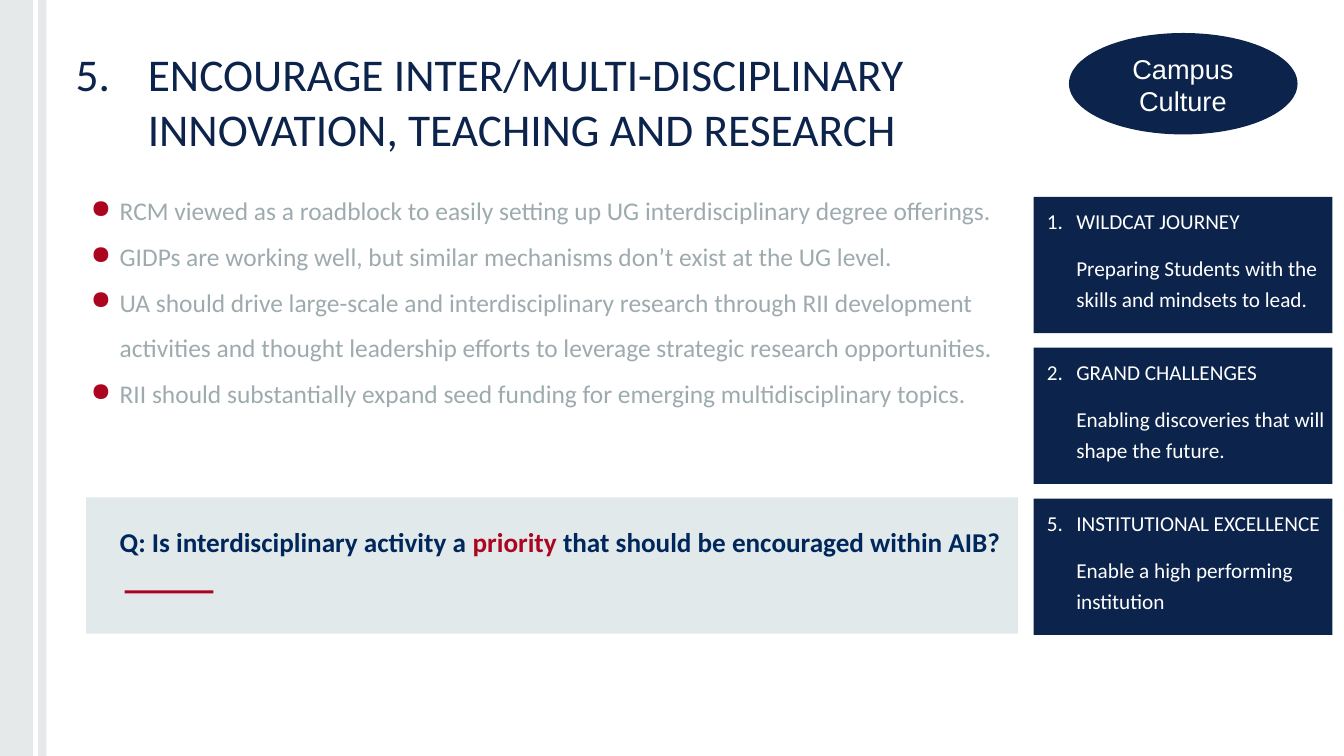
from dataclasses import dataclass

from lxml.etree import SubElement
from pptx import Presentation
from pptx.dml.color import RGBColor
from pptx.enum.shapes import MSO_SHAPE as SHAPE
from pptx.enum.text import MSO_ANCHOR as ANCHOR, PP_ALIGN as ALIGN
from pptx.oxml.ns import qn
from pptx.util import Inches, Pt


@dataclass(frozen=True)
class Theme:
    """Colours, fonts and type sizes of the slide."""
    navy: str = "0C234B"
    ink: str = "00275B"
    red: str = "AB0520"
    grey: str = "9EABAE"
    pale: str = "E2E9EB"
    white: str = "FFFFFF"
    font: str = "Calibri"
    badge_font: str = "Arial"
    title: float = 53.5
    body: float = 30
    question: float = 32
    card: float = 25


T = Theme()
POINTS = [
    "RCM viewed as a roadblock to easily setting up UG interdisciplinary degree offerings.",
    "GIDPs are working well, but similar mechanisms don’t exist at the UG level.",
    "UA should drive large-scale and interdisciplinary research through RII development "
    "activities and thought leadership efforts to leverage strategic research opportunities.",
    "RII should substantially expand seed funding for emerging multidisciplinary topics.",
]
CARDS = [
    ("1.\tWILDCAT JOURNEY", "Preparing Students with the skills and mindsets to lead."),
    ("2.\tGRAND CHALLENGES", "Enabling discoveries that will shape the future."),
    ("5.\tINSTITUTIONAL EXCELLENCE", "Enable a high performing institution"),
]


def add_block(s, x, y, w, h, color, kind=SHAPE.RECTANGLE, alpha=None):
    """Add a filled shape without outline, alpha being its opacity in percent."""
    sp = s.shapes.add_shape(kind, Inches(x), Inches(y), Inches(w), Inches(h))
    sp.shadow.inherit = False
    sp.line.fill.background()
    sp.fill.solid()
    sp.fill.fore_color.rgb = RGBColor.from_string(color)
    if alpha is not None:
        clr = sp.fill._xPr.find(qn("a:solidFill"))[0]
        SubElement(clr, qn("a:alpha"), val=str(alpha * 1000))
    return sp


def set_frame(sp, insets=(0.1, 0.1, 0.1, 0.1), anchor=ANCHOR.TOP, wrap=True):
    """Set the margins, anchor and wrapping of a shape's text frame."""
    tf = sp.text_frame
    tf.margin_left, tf.margin_top, tf.margin_right, tf.margin_bottom = map(Inches, insets)
    tf.vertical_anchor, tf.word_wrap = anchor, wrap
    return tf


def add_box(s, x, y, w, h, **frame):
    """Add a text box and return its text frame."""
    return set_frame(s.shapes.add_textbox(Inches(x), Inches(y), Inches(w), Inches(h)), **frame)


def add_text(tf, text, size, color, font=T.font, bold=False, align=ALIGN.LEFT,
             hang=None, spacing=None, before=0, bullet=None):
    """Add a paragraph; text is a string or a list of (text, color) runs."""
    p = tf.paragraphs[0] if not tf.text else tf.add_paragraph()
    p.alignment, p.space_before = align, Pt(before)
    if spacing:
        p.line_spacing = spacing
    pPr = p._p.get_or_add_pPr()
    if hang:
        left, first = hang
        pPr.set("marL", str(Inches(left)))
        pPr.set("indent", str(Inches(first)))
    if bullet:
        SubElement(SubElement(pPr, qn("a:buClr")), qn("a:srgbClr"), val=bullet)
        SubElement(pPr, qn("a:buChar"), char="●")
    for words, tint in [(text, color)] if isinstance(text, str) else text:
        for i, line in enumerate(words.split("\n")):
            if i:
                p.add_line_break()
            r = p.add_run()
            r.text = line
            r.font.name, r.font.size, r.font.bold = font, Pt(size), bold
            r.font.color.rgb = RGBColor.from_string(tint)


def add_edge(s, x, y, h):
    """Draw the pale band with its white stripe down the slide's edge."""
    add_block(s, x, y, 0.76, h, T.grey, alpha=25)
    add_block(s, x + 0.54, y, 0.08, h, T.white)


def add_title(s, x, y, w, h):
    """Write the numbered title."""
    add_text(add_box(s, x, y, w, h),
             "5.\tENCOURAGE INTER/MULTI-DISCIPLINARY\nINNOVATION, TEACHING AND RESEARCH",
             T.title, T.navy, hang=(1.2, -1.18))


def add_points(s, x, y, w, h):
    """Write the bulleted findings."""
    tf = add_box(s, x, y, w, h)
    for point in POINTS:
        add_text(tf, point, T.body, T.grey, hang=(0.5, -0.47), spacing=1.5, bullet=T.red)


def add_question(s, x, y, w, h):
    """Draw the question panel with its red rule."""
    add_block(s, x, y, w, h, T.pale)
    tf = add_box(s, x + 0.45, y + 0.4, w - 0.45, 0.65, anchor=ANCHOR.MIDDLE)
    add_text(tf, [("Q: Is interdisciplinary activity a ", T.ink), ("priority", T.red),
                  (" that should be encouraged within AIB?", T.ink)],
             T.question, T.ink, bold=True)
    add_block(s, x + 0.63, y + 1.52, 1.45, 0.05, T.red)


def add_cards(s, x, y, w, h, gap=0.24):
    """Stack the pillar cards, each of height h."""
    for i, (heading, text) in enumerate(CARDS):
        sp = add_block(s, x, y + i * (h + gap), w, h, T.navy)
        tf = set_frame(sp, insets=(0.2, 0.1, 0.1, 0.05))
        for words, before in ((heading, 0), ("\t" + text, 20)):
            add_text(tf, words, T.card, T.white, hang=(0.5, -0.48), spacing=1.2, before=before)


def add_badge(s, x, y, w, h):
    """Draw the oval theme badge and its label."""
    add_block(s, x, y, w, h, T.navy, SHAPE.OVAL)
    tf = add_box(s, x + 0.93, y + 0.26, w - 1.87, 1.18,
                 insets=(0.1, 0.05, 0.1, 0.05), wrap=False)
    add_text(tf, "Campus\nCulture", T.question, T.white, font=T.badge_font, align=ALIGN.CENTER)


def main():
    """Build and save the slide."""
    prs = Presentation()
    prs.slide_width, prs.slide_height = Inches(21.99), Inches(12.37)
    s = prs.slides.add_slide(prs.slide_layouts[6])
    add_edge(s, 0, 0, 12.37)
    add_title(s, 1.12, 0.66, 19.75, 0.99)
    add_points(s, 1.36, 2.84, 15.25, 5.04)
    add_question(s, 1.41, 8.14, 15.25, 2.23)
    add_cards(s, 16.91, 3.22, 4.89, 2.23)
    add_badge(s, 17.49, 0.54, 3.74, 1.66)
    prs.save("out.pptx")


if __name__ == "__main__":
    main()
